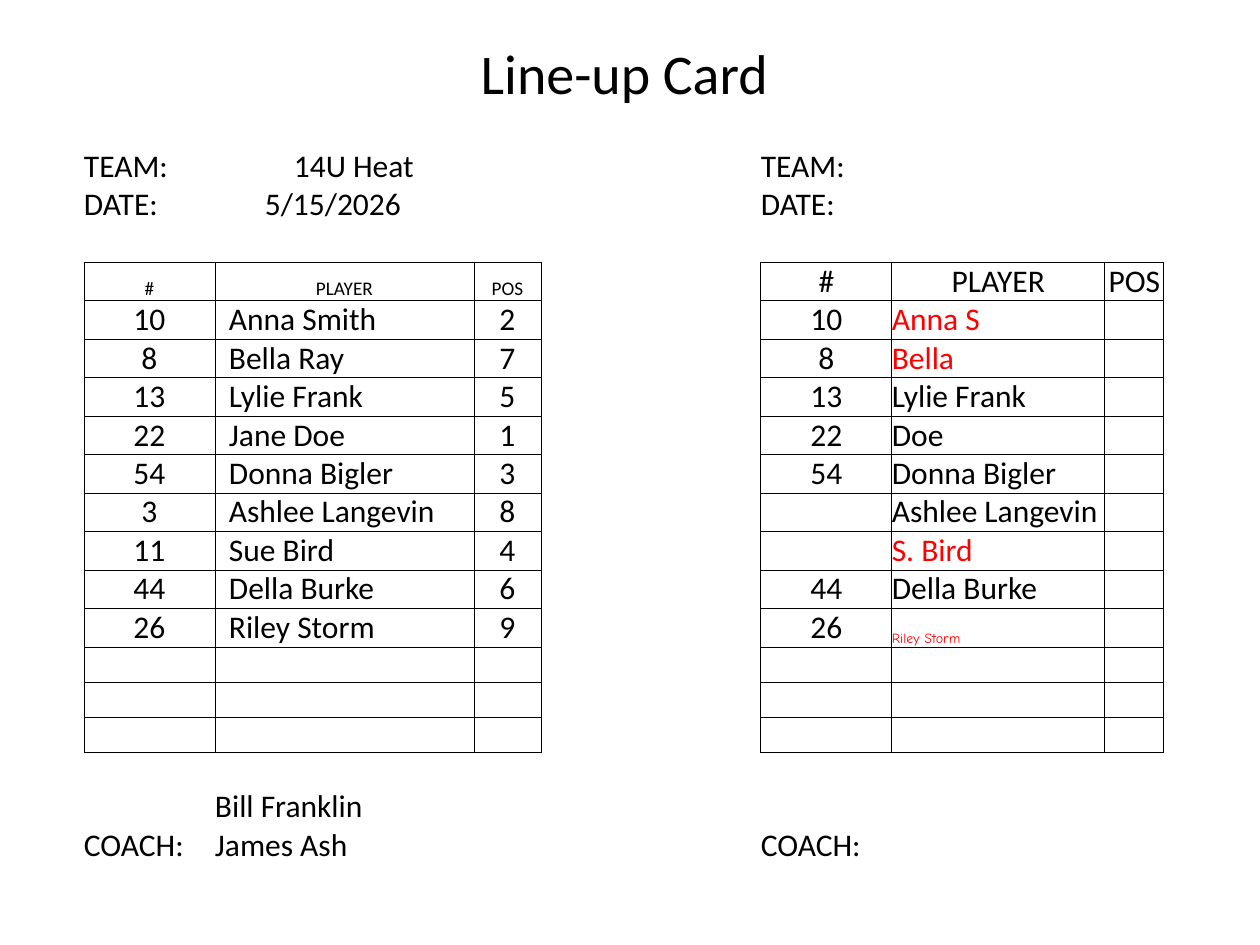
from dataclasses import dataclass

from lxml.etree import SubElement
from pptx import Presentation
from pptx.dml.color import RGBColor
from pptx.enum.text import MSO_ANCHOR as Anchor, PP_ALIGN as Align
from pptx.oxml.ns import qn
from pptx.util import Emu, Inches, Pt


@dataclass(frozen=True)
class Theme:
    font: str = "Calibri"
    alt_font: str = "Comic Neue"
    black: str = "000000"
    red: str = "FF0000"
    title: int = 32
    body: int = 18
    small: int = 11
    tiny: int = 8
    rule: float = 0.5


THEME = Theme()
PX = Inches(1) // 126

COLS = [131, 259, 67, 89, 131, 131, 213, 59]
ROWS = [38] * 13 + [36] + [35] * 3 + [76, 26, 35]
HOME, AWAY = 0, 5
HEADER, FIRST_PLAYER, LAST_GRID, COACH = 3, 4, 15, 17
GRID_COLS = {HOME, HOME + 1, HOME + 2, AWAY, AWAY + 1, AWAY + 2}

HEADINGS = ["#", "PLAYER", "POS"]
HOME_PLAYERS = [
    ("10", "Anna Smith", "2"), ("8", "Bella Ray", "7"), ("13", "Lylie Frank", "5"),
    ("22", "Jane Doe", "1"), ("54", "Donna Bigler", "3"), ("3", "Ashlee Langevin", "8"),
    ("11", "Sue Bird", "4"), ("44", "Della Burke", "6"), ("26", "Riley Storm", "9"),
]
RED = {"color": THEME.red}
AWAY_PLAYERS = [
    ("10", "Anna S", RED), ("8", "Bella", RED), ("13", "Lylie Frank", {}),
    ("22", "Doe", {}), ("54", "Donna Bigler", {}), ("", "Ashlee Langevin", {}),
    ("", "S. Bird", RED), ("44", "Della Burke", {}),
    ("26", "Riley Storm", {"color": THEME.red, "size": THEME.tiny, "font": THEME.alt_font}),
]
# First and last cell of each merged block, as (row, column)
MERGES = [((r, c), (r, c + 1)) for r in (0, 1) for c in (HOME + 1, AWAY + 1)]
MERGES += [((COACH + 1, c), (COACH + 2, c)) for c in range(6)]
MERGES += [((COACH, 6), (COACH + 2, 6)), ((COACH, 7), (COACH + 1, 7))]


def px(n):
    return Emu(n * PX)


def write(tf, text, size=THEME.body, color=THEME.black, font=THEME.font, align=Align.LEFT):
    tf.text = text
    for p in tf.paragraphs:
        p.alignment = align
        for r in p.runs:
            for name, value in {"size": Pt(size), "name": font}.items():
                setattr(r.font, name, value)
            r.font.color.rgb = RGBColor.from_string(color)


def put(table, row, col, text, indent=0, **style):
    """Write into a table cell; blank text leaves the cell as it is."""
    if text:
        cell = table.cell(row, col)
        cell.margin_left = px(indent)
        write(cell.text_frame, text, **style)


def in_grid(row, col):
    return HEADER <= row <= LAST_GRID and col in GRID_COLS


def draw_borders(cell, row, col):
    """Rule every side that touches the ruled part of either team's list."""
    sides = {"lnL": (row, col - 1), "lnR": (row, col + 1),
             "lnT": (row - 1, col), "lnB": (row + 1, col)}
    tc_pr = cell._tc.get_or_add_tcPr()
    for tag, neighbour in sides.items():
        ln = SubElement(tc_pr, qn(f"a:{tag}"), w=str(Pt(THEME.rule)))
        if in_grid(row, col) or in_grid(*neighbour):
            fill = SubElement(ln, qn("a:solidFill"))
            SubElement(fill, qn("a:srgbClr"), val=THEME.black)
        else:
            SubElement(ln, qn("a:noFill"))


def prepare_cell(cell, row, col):
    for side in ("left", "right", "top", "bottom"):
        setattr(cell, f"margin_{side}", 0)
    cell.vertical_anchor = Anchor.BOTTOM
    draw_borders(cell, row, col)
    cell.fill.background()


def shrink_blank_cells(table):
    for cell in table.iter_cells():
        if not cell.text_frame.text:
            p = cell.text_frame.paragraphs[0]
            SubElement(p._p, qn("a:endParaRPr"), sz=str(THEME.small * 100))


def add_title(slide):
    sp = slide.shapes.title
    sp.left, sp.top, sp.width, sp.height = map(px, (210, 32, 829, 81))
    write(sp.text_frame, "Line-up Card", size=THEME.title, align=Align.CENTER)


def add_card_table(slide):
    frame = slide.shapes.add_table(len(ROWS), len(COLS), px(84), px(147),
                                   px(sum(COLS)), px(sum(ROWS)))
    table = frame.table
    table.first_row = table.horz_banding = False
    for column, width in zip(table.columns, COLS):
        column.width = px(width)
    for i, (row, height) in enumerate(zip(table.rows, ROWS)):
        row.height = px(height)
        for j, cell in enumerate(row.cells):
            prepare_cell(cell, i, j)
    for first, last in MERGES:
        table.cell(*first).merge(table.cell(*last))
    return table


def fill_labels(table):
    for start, size in ((HOME, THEME.small), (AWAY, THEME.body)):
        for row, label in ((0, "TEAM:"), (1, "DATE:"), (COACH, "COACH:")):
            put(table, row, start, label)
        for i, heading in enumerate(HEADINGS):
            put(table, HEADER, start + i, heading, size=size, align=Align.CENTER)
    put(table, 0, HOME + 1, "14U Heat", indent=79)
    put(table, 1, HOME + 1, "5/15/2026", indent=50)
    put(table, COACH, HOME + 1, "Bill Franklin\nJames Ash")


def fill_players(table):
    for row, (number, name, position) in enumerate(HOME_PLAYERS, FIRST_PLAYER):
        put(table, row, HOME, number, align=Align.CENTER)
        put(table, row, HOME + 1, name, indent=14)
        put(table, row, HOME + 2, position, align=Align.CENTER)
    for row, (number, name, style) in enumerate(AWAY_PLAYERS, FIRST_PLAYER):
        put(table, row, AWAY, number, align=Align.CENTER)
        put(table, row, AWAY + 1, name, **style)


def main():
    prs = Presentation()
    prs.slide_width, prs.slide_height = Inches(10), Inches(7.5)
    slide = prs.slides.add_slide(prs.slide_layouts[5])
    add_title(slide)
    table = add_card_table(slide)
    fill_labels(table)
    fill_players(table)
    shrink_blank_cells(table)
    prs.save("out.pptx")


if __name__ == "__main__":
    main()
